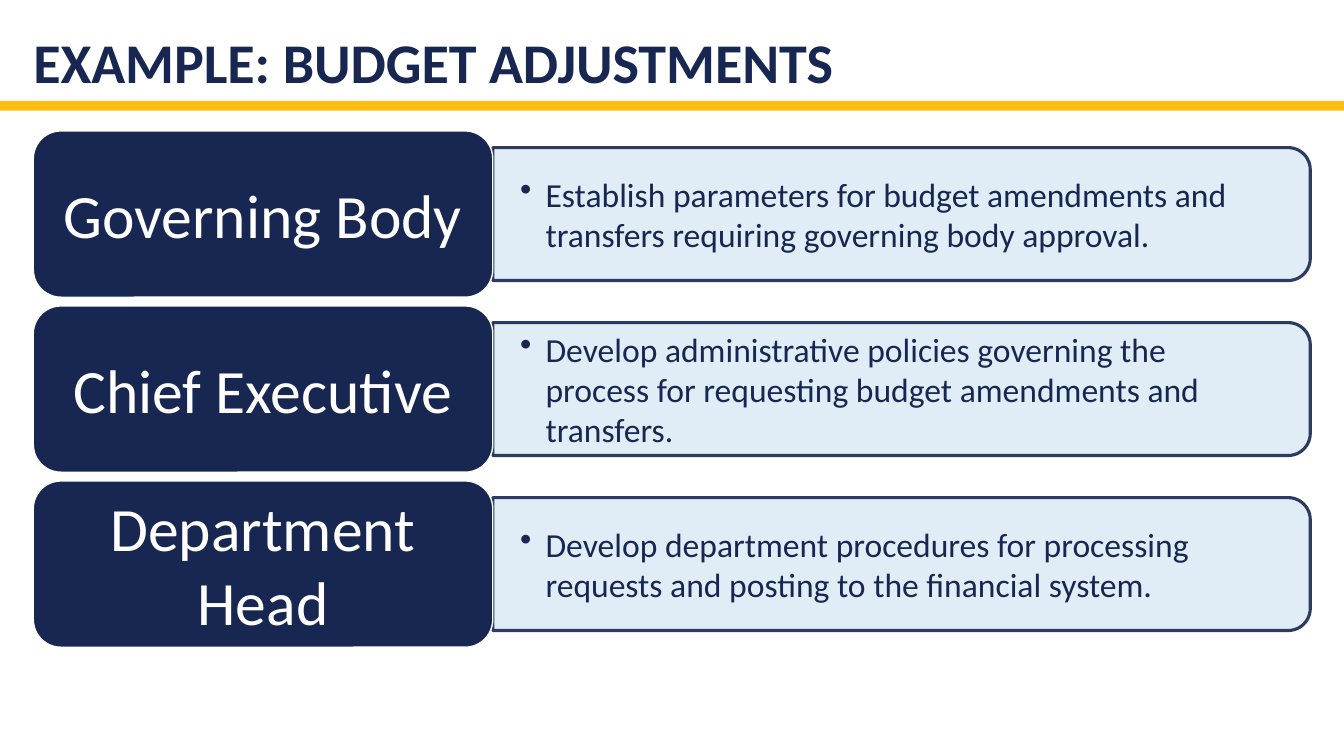
from lxml.etree import SubElement
from pptx import Presentation
from pptx.dml.color import RGBColor
from pptx.enum.shapes import MSO_SHAPE
from pptx.enum.text import MSO_ANCHOR, PP_ALIGN
from pptx.oxml.ns import qn
from pptx.util import Cm, Pt

COLORS = {"navy": "182751", "gold": "FEBD11", "pale": "DDECF6", "white": "FFFFFF"}

ROWS = [
    ("Governing Body",
     "Establish parameters for budget amendments and transfers requiring governing body approval."),
    ("Chief Executive",
     "Develop administrative policies governing the process for requesting "
     "budget amendments and transfers."),
    ("Department Head",
     "Develop department procedures for processing requests and posting to the financial system."),
]

MARGIN, TOP, PITCH = 0.84, 3.3, 4.41
LABEL_W, LABEL_H = 11.58, 4.19
PANEL_W, PANEL_H = 20.6, 3.35
DETAIL_W, DETAIL_H = 20.42, 3.02


def rgb(name):
    return RGBColor.from_string(COLORS[name])


def set_alpha(parent, percent):
    """Make the solid fill inside an XML element partly transparent."""
    color = parent.find(qn("a:solidFill"))[0]
    SubElement(color, qn("a:alpha")).set("val", str(percent * 1000))


class Deck:
    """Holds the style and the current slide."""

    font = "Calibri"

    def __init__(self):
        self.prs = Presentation()
        self.prs.slide_width, self.prs.slide_height = Cm(33.87), Cm(19.05)
        self.s = self.prs.slides.add_slide(self.prs.slide_layouts[6])

    def shape(self, kind, box, fill, line=None, width=1, alpha=None):
        sp = self.s.shapes.add_shape(kind, *map(Cm, box))
        sp.shadow.inherit = False
        sp.fill.solid()
        sp.fill.fore_color.rgb = rgb(fill)
        if line:
            sp.line.color.rgb = rgb(line)
            sp.line.width = Pt(width)
        else:
            sp.line.fill.background()
        if alpha:
            spPr = sp._element.spPr
            set_alpha(spPr, alpha)
            set_alpha(spPr.find(qn("a:ln")), alpha)
        return sp

    def textbox(self, box, text, **style):
        sp = self.s.shapes.add_textbox(*map(Cm, box))
        self.fill_text(sp, text, **style)

    def fill_text(self, sp, text, size, color="navy", bold=False, insets=(0, 0),
                  anchor=MSO_ANCHOR.MIDDLE, align=PP_ALIGN.LEFT, spacing=1.0, bullet=False):
        tf = sp.text_frame
        x, y = map(Cm, insets)
        frame = {"word_wrap": True, "vertical_anchor": anchor, "margin_left": x,
                 "margin_right": x, "margin_top": y, "margin_bottom": y}
        for name, value in frame.items():
            setattr(tf, name, value)
        p = tf.paragraphs[0]
        p.alignment, p.line_spacing = align, spacing
        if bullet:
            pPr = p._p.get_or_add_pPr()
            pPr.set("marL", str(Cm(0.64)))
            pPr.set("indent", str(Cm(-0.64)))
            SubElement(pPr, qn("a:buChar")).set("char", "•")
        r = p.add_run()
        r.text = text
        for name, value in {"name": self.font, "size": Pt(size), "bold": bold}.items():
            setattr(r.font, name, value)
        r.font.color.rgb = rgb(color)

    def row(self, top, label, detail):
        """Draw a label with its detail panel tucked against the right side."""
        left, middle = MARGIN + LABEL_W, top + LABEL_H / 2
        panel = self.shape(
            MSO_SHAPE.ROUND_2_SAME_RECTANGLE,
            (left + (PANEL_W - PANEL_H) / 2, middle - PANEL_W / 2, PANEL_H, PANEL_W),
            "pale", line="navy", width=2.25, alpha=90)
        panel.rotation = 90
        self.textbox((left, middle - DETAIL_H / 2, DETAIL_W, DETAIL_H), detail,
                     size=24, insets=(0.69, 0.36), bullet=True)
        sp = self.shape(MSO_SHAPE.ROUNDED_RECTANGLE, (MARGIN, top, LABEL_W, LABEL_H),
                        "navy", line="white")
        self.fill_text(sp, label, size=44, color="white", insets=(0.46, 0.23),
                       align=PP_ALIGN.CENTER)


def main():
    deck = Deck()
    deck.shape(MSO_SHAPE.RECTANGLE, (0, 2.54, 33.87, 0.25), "gold")
    deck.textbox((MARGIN, 0, 32.18, 2.54), "EXAMPLE: BUDGET ADJUSTMENTS", size=40, bold=True,
                 insets=(0, 0.13), anchor=MSO_ANCHOR.BOTTOM, spacing=0.9)
    for i, (label, detail) in enumerate(ROWS):
        deck.row(TOP + i * PITCH, label, detail)
    deck.prs.save("out.pptx")


if __name__ == "__main__":
    main()
